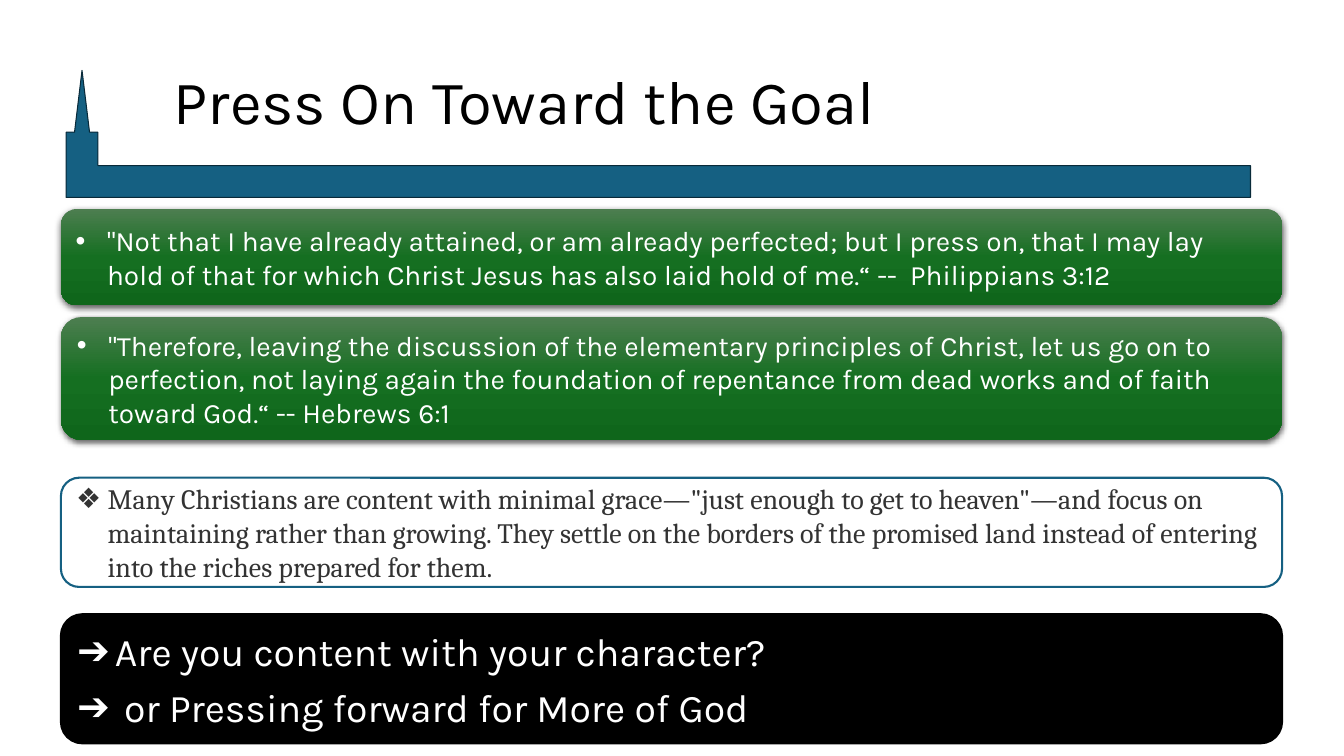
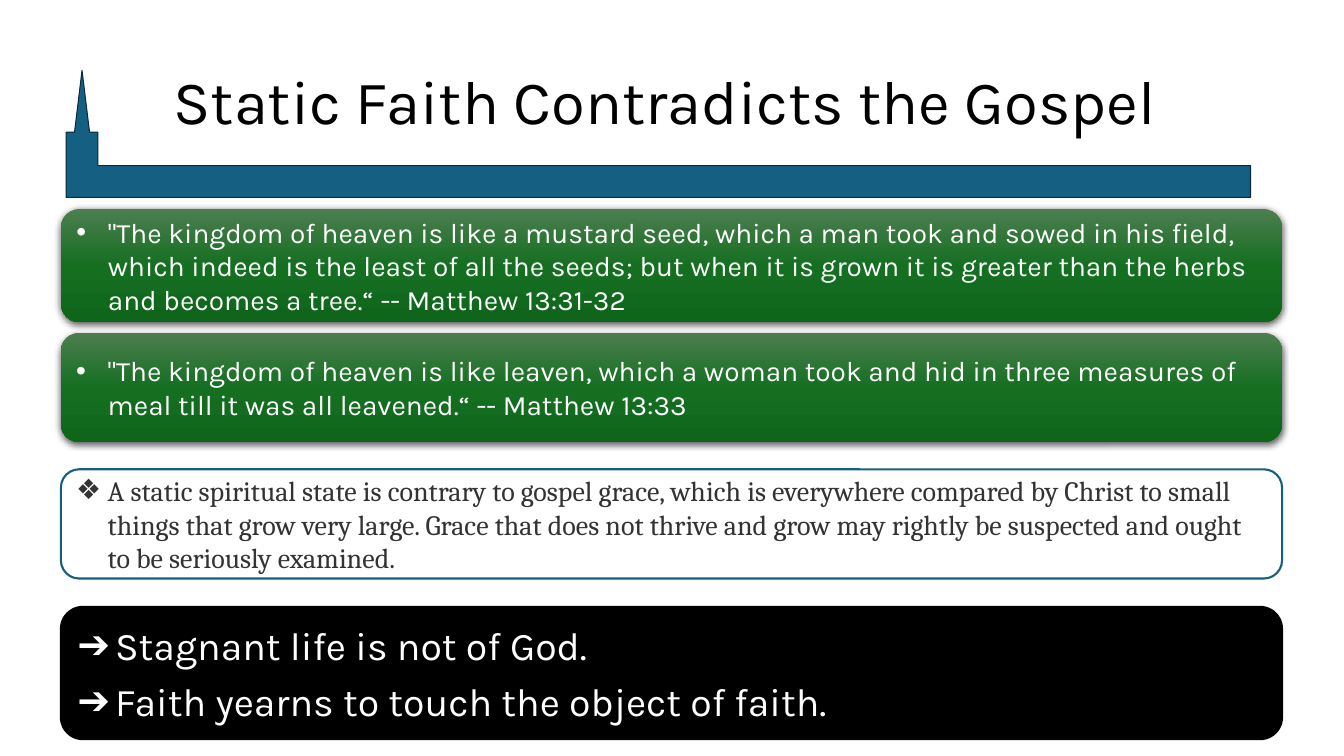
"""Build two slides of verses, a remark and closing points under a steeple banner."""
import copy
import dataclasses

import lxml.etree
import pptx
import pptx.dml.color
import pptx.enum.shapes
import pptx.enum.text
import pptx.oxml.ns
import pptx.util


@dataclasses.dataclass(frozen=True)
class Theme:
    sans: str = "Karla"
    serif: str = "Cambria"
    title_size: int = 44
    body_size: int = 20
    point_size: int = 28
    white: str = "FFFFFF"
    black: str = "000000"
    ink: str = "333333"
    blue: str = "156082"
    navy: str = "092A39"
    greens: tuple = ((0, "4D7E50"), (0.5, "156F21"), (1, "0F661B"))


THEME = Theme()
EMU_PER_PX = 9525
SLIDE_SIZE = (1280, 720)
STEEPLE_BOX = (71, 67, 1120, 121)
STEEPLE_ADJUST = (0.25, 0.059, 0.487)
TITLE_BOX = (156, 39, 1037, 121)
CARD_LEFT, CARD_WIDTH = 58, 1163

CARD_STYLES = {
    "verse": dict(fill=THEME.greens, line=None, bullet="•", indent=30,
                  font=THEME.sans, size=THEME.body_size, color=THEME.white),
    "remark": dict(fill=THEME.white, line=THEME.blue, bullet="❖", indent=30,
                   font=THEME.serif, size=THEME.body_size, color=THEME.ink),
    "points": dict(fill=THEME.black, line=THEME.black, bullet="➔", indent=36,
                   font=THEME.sans, size=THEME.point_size, color=THEME.white),
}

SLIDES = [
    ("Press On Toward the Goal", [
        ("verse", 199, 92, [
            "\"Not that I have already attained, or am already perfected; but I press on, "
            "that I may lay hold of that for which Christ Jesus has also laid hold of me.“ "
            "--  Philippians 3:12"]),
        ("verse", 302, 117, [
            "\"Therefore, leaving the discussion of the elementary principles of Christ, "
            "let us go on to perfection, not laying again the foundation of repentance "
            "from dead works and of faith toward God.“ -- Hebrews 6:1"]),
        ("remark", 455, 104, [
            "Many Christians are content with minimal grace—\"just enough to get to "
            "heaven\"—and focus on maintaining rather than growing. They settle on the "
            "borders of the promised land instead of entering into the riches prepared "
            "for them."]),
        ("points", 585, 123, [
            "Are you content with your character?",
            " or Pressing forward for More of God"]),
    ]),
    ("Static Faith Contradicts the Gospel", [
        ("verse", 199, 108, [
            "\"The kingdom of heaven is like a mustard seed, which a man took and sowed in "
            "his field, which indeed is the least of all the seeds; but when it is grown it "
            "is greater than the herbs and becomes a tree.“ -- Matthew 13:31-32"]),
        ("verse", 317, 104, [
            "\"The kingdom of heaven is like leaven, which a woman took and hid in three "
            "measures of meal till it was all leavened.“ -- Matthew 13:33"]),
        ("remark", 447, 104, [
            "A static spiritual state is contrary to gospel grace, which is everywhere "
            "compared by Christ to small things that grow very large. Grace that does not "
            "thrive and grow may rightly be suspected and ought to be seriously examined."]),
        ("points", 578, 126, [
            "Stagnant life is not of God.",
            "Faith yearns to touch the object of faith."]),
    ]),
]


def px(*lengths):
    return [pptx.util.Emu(n * EMU_PER_PX) for n in lengths]


def rgb(color):
    return pptx.dml.color.RGBColor.from_string(color)


def add_child(parent, tag, **attributes):
    child = lxml.etree.SubElement(parent, pptx.oxml.ns.qn(tag))
    for name, value in attributes.items():
        child.set(name, str(value))
    return child


def set_font(p, name, size, color):
    p.font.name = name
    p.font.size = pptx.util.Pt(size)
    p.font.color.rgb = rgb(color)


def paint(sp, fill, line, line_width):
    sp.shadow.inherit = False
    sp.fill.solid()
    sp.fill.fore_color.rgb = rgb(fill)
    sp.line.color.rgb = rgb(line)
    sp.line.width = pptx.util.Pt(line_width)


def paint_raised(sp, stops):
    sp.line.fill.background()
    sp.fill.gradient()
    sp.fill.gradient_angle = 270
    spPr = sp.element.spPr
    stop_list = spPr.find(".//" + pptx.oxml.ns.qn("a:gsLst"))
    stop_list.append(copy.deepcopy(stop_list[0]))
    for stop, (position, color) in zip(sp.fill.gradient_stops, stops):
        stop.position = position
        stop.color.rgb = rgb(color)
    sp.shadow.inherit = False
    effects = spPr.find(pptx.oxml.ns.qn("a:effectLst"))
    shadow = add_child(effects, "a:outerShdw", blurRad=pptx.util.Pt(4.5),
                       dist=pptx.util.Pt(1.5), dir=5400000, algn="ctr", rotWithShape=0)
    add_child(add_child(shadow, "a:srgbClr", val=THEME.black), "a:alpha", val=63000)


def add_header(slide, title):
    sp = slide.shapes.add_shape(pptx.enum.shapes.MSO_SHAPE.BENT_UP_ARROW, *px(*STEEPLE_BOX))
    for i, value in enumerate(STEEPLE_ADJUST):
        sp.adjustments[i] = value
    sp.element.spPr.xfrm.set("flipH", "1")
    paint(sp, THEME.blue, THEME.navy, 0.75)

    tf = slide.shapes.add_textbox(*px(*TITLE_BOX)).text_frame
    tf.word_wrap = True
    tf.vertical_anchor = pptx.enum.text.MSO_ANCHOR.MIDDLE
    p = tf.paragraphs[0]
    p.text = title
    p.line_spacing = 0.9
    set_font(p, THEME.sans, THEME.title_size, THEME.black)


def add_card(slide, kind, top, height, lines):
    style = CARD_STYLES[kind]
    sp = slide.shapes.add_shape(pptx.enum.shapes.MSO_SHAPE.ROUNDED_RECTANGLE,
                                *px(CARD_LEFT, top, CARD_WIDTH, height))
    if style["line"]:
        paint(sp, style["fill"], style["line"], 1.5)
    else:
        paint_raised(sp, style["fill"])

    tf = sp.text_frame
    tf.word_wrap = True
    tf.vertical_anchor = pptx.enum.text.MSO_ANCHOR.MIDDLE
    indent = px(style["indent"])[0]
    for i, line in enumerate(lines):
        p = tf.add_paragraph() if i else tf.paragraphs[0]
        p.text = line
        p.alignment = pptx.enum.text.PP_ALIGN.LEFT
        if i:
            p.space_before = pptx.util.Pt(6)
        pPr = p._p.get_or_add_pPr()
        pPr.set("marL", str(indent))
        pPr.set("indent", str(-indent))
        add_child(pPr, "a:buFont", typeface="Arial")
        add_child(pPr, "a:buChar", char=style["bullet"])
        set_font(p, style["font"], style["size"], style["color"])


def main():
    prs = pptx.Presentation()
    prs.slide_width, prs.slide_height = px(*SLIDE_SIZE)
    for title, cards in SLIDES:
        slide = prs.slides.add_slide(prs.slide_layouts[6])
        add_header(slide, title)
        for card in cards:
            add_card(slide, *card)
    prs.save("out.pptx")


if __name__ == "__main__":
    main()
